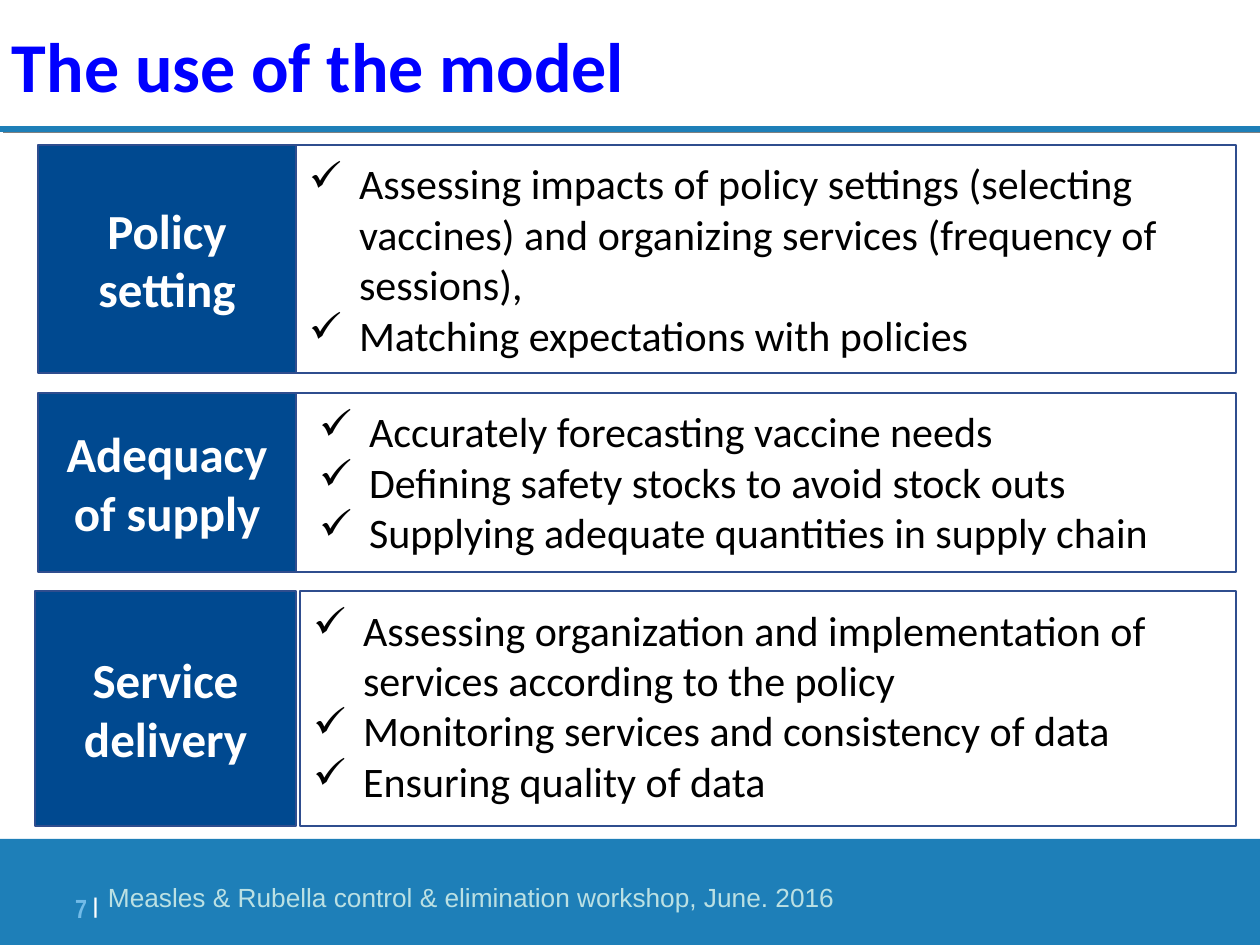
from lxml import etree
from pptx import Presentation
from pptx.dml.color import RGBColor
from pptx.enum.shapes import MSO_CONNECTOR, MSO_SHAPE
from pptx.enum.text import MSO_ANCHOR, PP_ALIGN
from pptx.oxml.ns import qn
from pptx.util import Pt

RECTANGLE = MSO_SHAPE.RECTANGLE
STRAIGHT = MSO_CONNECTOR.STRAIGHT
LEFT, CENTER, RIGHT = PP_ALIGN.LEFT, PP_ALIGN.CENTER, PP_ALIGN.RIGHT
TOP, MIDDLE = MSO_ANCHOR.TOP, MSO_ANCHOR.MIDDLE

WHITE = RGBColor(0xFF, 0xFF, 0xFF)
BLACK = RGBColor(0x00, 0x00, 0x00)
TITLE_BLUE = RGBColor(0x00, 0x00, 0xFF)
BAND_BLUE = RGBColor(0x1E, 0x7F, 0xB8)
LABEL_BLUE = RGBColor(0x00, 0x49, 0x90)
BORDER_BLUE = RGBColor(0x2F, 0x4D, 0x8E)
NUMBER_BLUE = RGBColor(0x72, 0xBB, 0xE8)
FOOTER_TEAL = RGBColor(0xBB, 0xE0, 0xE3)

EMU_PER_PX = 914400 / 126


def px(*lengths):
    return [round(length * EMU_PER_PX) for length in lengths]


def write_text(shape, paragraphs, font="Calibri", size=24, color=BLACK, bold=False,
               align=LEFT, anchor=TOP, inset=(13, 13), indent=None):
    frame = shape.text_frame
    frame.word_wrap = True
    frame.vertical_anchor = anchor
    frame.margin_left, frame.margin_top = px(*inset)
    frame.margin_right, frame.margin_bottom = px(*inset)
    for index, text in enumerate(paragraphs):
        paragraph = frame.add_paragraph() if index else frame.paragraphs[0]
        paragraph.alignment = align
        if indent:
            properties = paragraph._p.get_or_add_pPr()
            margin, hanging = px(indent, -50)
            properties.set("marL", str(margin))
            properties.set("indent", str(hanging))
            etree.SubElement(properties, qn("a:buChar"), char="✓")
        run = paragraph.add_run()
        run.text = text
        run.font.name = font
        run.font.size = Pt(size)
        run.font.bold = bold
        run.font.color.rgb = color


presentation = Presentation()
presentation.slide_width, presentation.slide_height = px(1260, 945)
slide = presentation.slides.add_slide(presentation.slide_layouts[6])
shapes = slide.shapes

# Rule under the title, with a small hard shadow
rule = shapes.add_connector(STRAIGHT, *px(0, 129, 1260, 129))
rule.line.color.rgb = BAND_BLUE
rule.line.width = Pt(3)
effects = etree.SubElement(rule._element.spPr, qn("a:effectLst"))
shadow = etree.SubElement(effects, qn("a:outerShdw"), dist=str(Pt(2.2)), dir=str(27 * 60000))
etree.SubElement(shadow, qn("a:srgbClr"), val="808080")

# Footer band, slide number and event name
band = shapes.add_shape(RECTANGLE, *px(0, 839, 1260, 106))
band.shadow.inherit = False
band.fill.solid()
band.fill.fore_color.rgb = BAND_BLUE
band.line.fill.background()

number = shapes.add_textbox(*px(49, 882, 49, 45))
write_text(number, ["7 "], font="Arial Narrow", size=15, color=NUMBER_BLUE, bold=True,
           align=RIGHT, inset=(0, 0))
divider = number.text_frame.paragraphs[0].add_run()
divider.text = "|"
divider.font.name = "Arial Narrow"
divider.font.size = Pt(21)
divider.font.bold = True
divider.font.color.rgb = WHITE
divider.font._element.set("baseline", "14000")

event = shapes.add_textbox(*px(95, 875, 764, 44))
write_text(event, ["Measles & Rubella control & elimination workshop, June. 2016"],
           font="Arial", size=15, color=FOOTER_TEAL, inset=(13, 6))

# Title
title = shapes.add_textbox(*px(-1, 16, 1260, 110))
write_text(title, ["The use of the model"], size=40, color=TITLE_BLUE, bold=True, inset=(13, 6))

# Rows: label, label left, body left, top, height, bullet indent, bullets
LABEL_RIGHT, BODY_RIGHT = 296, 1236
ROWS = [
    ("Policy setting", 38, 296, 145, 228, 50, [
        "Assessing impacts of policy settings (selecting vaccines) and organizing services "
        "(frequency of sessions),",
        "Matching expectations with policies"]),
    ("Adequacy of supply", 38, 296, 393, 179, 60, [
        "Accurately forecasting vaccine needs",
        "Defining safety stocks to avoid stock outs",
        "Supplying adequate quantities in supply chain"]),
    ("Service delivery", 35, 300, 591, 235, 50, [
        "Assessing organization and implementation of services according to the policy",
        "Monitoring services and consistency of data",
        "Ensuring quality of data"]),
]
for name, label_left, body_left, top, height, indent, bullets in ROWS:
    label = shapes.add_shape(RECTANGLE, *px(label_left, top, LABEL_RIGHT - label_left, height))
    body = shapes.add_shape(RECTANGLE, *px(body_left, top, BODY_RIGHT - body_left, height))
    for box in (label, body):
        box.shadow.inherit = False
        box.line.color.rgb = BORDER_BLUE
        box.line.width = Pt(0.75)
    label.fill.solid()
    label.fill.fore_color.rgb = LABEL_BLUE
    body.fill.background()
    write_text(label, [name], size=28, color=WHITE, bold=True, align=CENTER, anchor=MIDDLE)
    write_text(body, bullets, indent=indent)

presentation.save("out.pptx")
